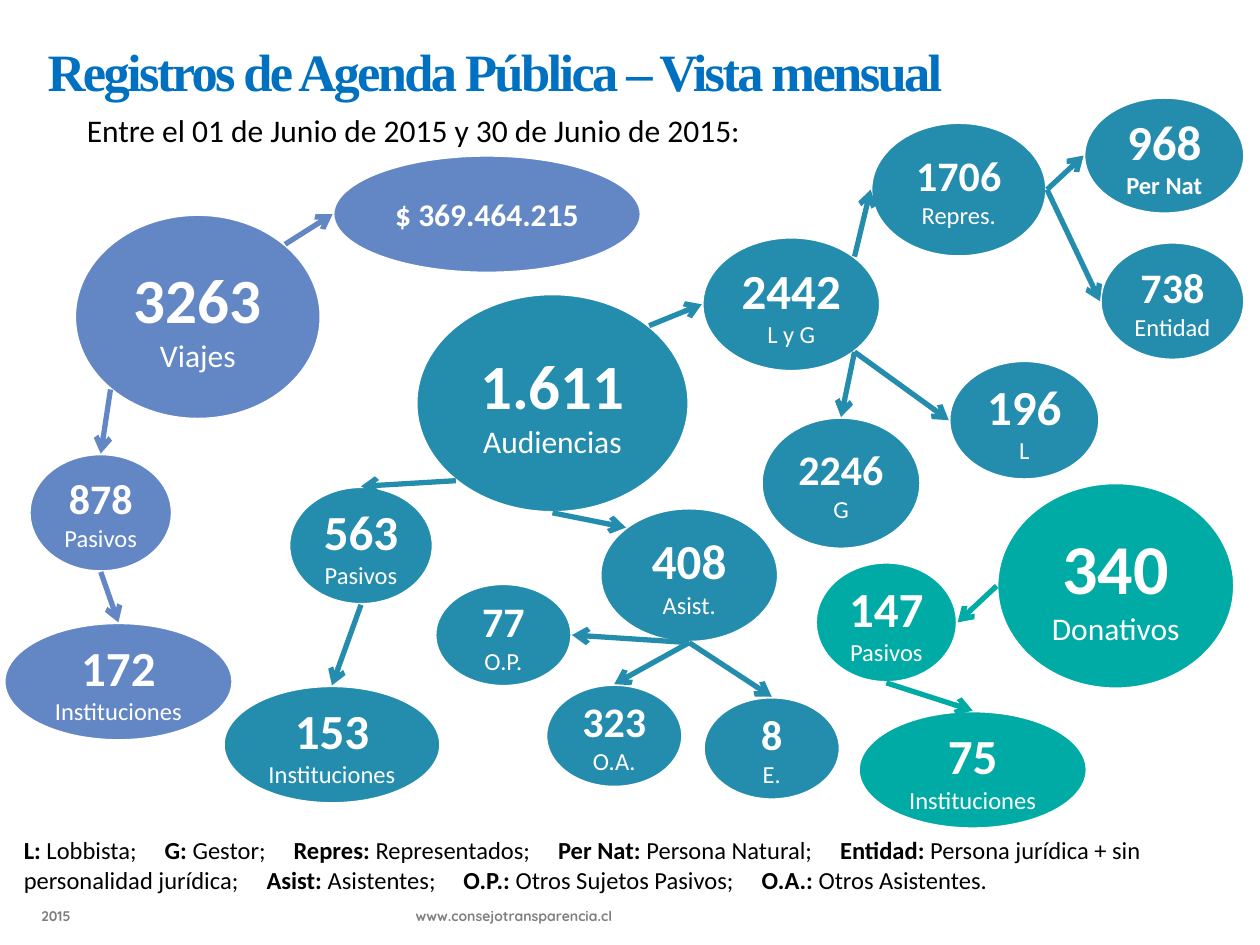
"""Build the monthly overview slide of public agenda records."""
from math import cos, radians, sin

from lxml.etree import SubElement
from pptx import Presentation
from pptx.dml.color import RGBColor
from pptx.enum.shapes import MSO_CONNECTOR, MSO_SHAPE
from pptx.enum.text import MSO_ANCHOR, PP_ALIGN
from pptx.oxml.ns import qn
from pptx.util import Inches, Pt

THEME = {
    "travel": "6387C5", "hearing": "248CAD", "gift": "00AAA5",
    "white": "FFFFFF", "black": "000000", "title": "0070C0", "footer": "808080",
    "body_font": "Calibri", "title_font": "Times New Roman", "footer_font": "Quicksand",
    "title_size": 30, "subtitle_size": 18, "legend_size": 14, "footer_size": 8,
    "huge": 40, "large": 36, "medium": 28, "small": 24, "caption": 18, "label": 14,
    "outline": 2, "arrow": 3, "title_spacing": -1.5, "legend_gap": 12.7,
}

TITLE = "Registros de Agenda Pública – Vista mensual"
SUBTITLE = "Entre el 01 de Junio de 2015 y 30 de Junio de 2015:"
FOOTER = "2015\twww.consejotransparencia.cl"
FOOTER_TAB = 2.97
LEGEND = [
    ("L:", "Lobbista;"), ("G:", "Gestor;"), ("Repres:", "Representados;"),
    ("Per Nat:", "Persona Natural;"),
    ("Entidad:", "Persona jurídica + sin personalidad jurídica;"),
    ("Asist:", "Asistentes;"), ("O.P.:", "Otros Sujetos Pasivos;"),
    ("O.A.:", "Otros Asistentes."),
]

BUBBLES = {
    "hearings": ("hearing", (3.3, 2.33, 2.17, 1.74), "1.611", "large", "Audiencias", "caption"),
    "gifts": ("gift", (7.91, 3.83, 1.89, 1.64), "340", "huge", "Donativos", "caption"),
    "trips": ("travel", (0.59, 1.7, 1.96, 1.63), "3263", "large", "Viajes", "caption"),
    "cost": ("travel", (2.64, 1.23, 2.45, 0.94), "$ 369.464.215", "caption", "", ""),
    "trip officials": ("travel", (0.23, 3.6, 1.14, 0.94), "878", "small", "Pasivos", "label"),
    "lobby": ("hearing", (5.57, 1.88, 1.42, 1.07), "2442", "medium", "L y G", "label"),
    "trip bodies": ("travel", (0.03, 4.94, 1.82, 0.94), "172", "medium", "Instituciones", "label"),
    "officials": ("hearing", (2.29, 3.86, 1.15, 0.94), "563", "medium", "Pasivos", "label"),
    "bodies": ("hearing", (1.77, 5.44, 1.73, 0.94), "153", "medium", "Instituciones", "label"),
    "represented": ("hearing", (6.91, 0.97, 1.4, 1.07), "1706", "small", "Repres.", "label"),
    "lobbyists": ("hearing", (7.53, 2.86, 1.2, 0.95), "196", "medium", "L", "label"),
    "managers": ("hearing", (6.04, 3.31, 1.27, 1.05), "2246", "small", "G", "label"),
    "gift officials": ("gift", (6.47, 4.46, 1.13, 0.96), "147", "medium", "Pasivos", "label"),
    "gift bodies": ("gift", (6.81, 5.64, 1.82, 0.94), "75", "medium", "Instituciones", "label"),
    "persons": ("hearing", (8.6, 0.77, 1.28, 0.93), "968", "medium", "Per Nat", "label"),
    "entities": ("hearing", (8.73, 1.92, 1.15, 0.94), "738", "small", "Entidad", "label"),
    "attendees": ("hearing", (4.76, 4.03, 1.42, 1.07), "408", "medium", "Asist.", "label"),
    "other officials": ("hearing", (3.45, 4.63, 1.09, 0.82), "77", "small", "O.P.", "label"),
    "other attendees": ("hearing", (4.33, 5.43, 1.09, 0.82), "323", "small", "O.A.", "label"),
    "e": ("hearing", (5.58, 5.53, 1.09, 0.82), "8", "small", "E.", "label"),
}
BOLD_LABELS = {"persons"}

ARROWS = [
    ("trips", "top right", "cost", "left"),
    ("trips", "bottom left", "trip officials", "top"),
    ("trip officials", "bottom", "trip bodies", "top"),
    ("hearings", "top right", "lobby", "left"),
    ("hearings", "bottom left", "officials", "top"),
    ("hearings", "bottom", "attendees", "top left"),
    ("officials", "bottom", "bodies", "top"),
    ("lobby", "top right", "represented", "left"),
    ("lobby", "bottom right", "managers", "top"),
    ("lobby", "bottom right", "lobbyists", "left"),
    ("represented", "right", "persons", "left"),
    ("represented", "right", "entities", "left"),
    ("attendees", "bottom", "other officials", "right"),
    ("attendees", "bottom", "other attendees", "top"),
    ("attendees", "bottom", "e", "top"),
    ("gifts", "left", "gift officials", "right"),
    ("gift officials", "bottom", "gift bodies", "top"),
]
SIDES = ["right", "bottom right", "bottom", "bottom left",
         "left", "top left", "top", "top right"]


def color(name):
    return RGBColor.from_string(THEME[name])


def add_span(para, text, size, ink, bold=False, font="body_font", spacing=0):
    span = para.add_run()
    span.text = text
    span.font.size = Pt(THEME[size])
    span.font.name = THEME[font]
    span.font.bold = bold
    span.font.color.rgb = color(ink)
    if spacing:
        span.font._element.set("spc", str(round(spacing * 100)))


def add_text_box(page, place):
    box = page.shapes.add_textbox(*map(Inches, place))
    box.text_frame.word_wrap = True
    return box.text_frame.paragraphs[0]


def add_bubble(page, name):
    fill, place, value, value_size, label, label_size = BUBBLES[name]
    bubble = page.shapes.add_shape(MSO_SHAPE.OVAL, *map(Inches, place))
    bubble.shadow.inherit = False
    bubble.fill.solid()
    bubble.fill.fore_color.rgb = color(fill)
    bubble.line.color.rgb = color("white")
    bubble.line.width = Pt(THEME["outline"])
    frame = bubble.text_frame
    frame.word_wrap = True
    frame.vertical_anchor = MSO_ANCHOR.MIDDLE
    para = frame.paragraphs[0]
    para.alignment = PP_ALIGN.CENTER
    add_span(para, value, value_size, "white", bold=True)
    if label:
        para = frame.add_paragraph()
        para.alignment = PP_ALIGN.CENTER
        add_span(para, label, label_size, "white", bold=name in BOLD_LABELS)


def edge_point(name, side):
    left, top, width, height = BUBBLES[name][1]
    angle = radians(45 * SIDES.index(side))
    return (Inches(left + width / 2 * (1 + cos(angle))),
            Inches(top + height / 2 * (1 + sin(angle))))


def add_arrow(page, source, source_side, target, target_side):
    arrow = page.shapes.add_connector(
        MSO_CONNECTOR.STRAIGHT,
        *edge_point(source, source_side), *edge_point(target, target_side))
    arrow.line.color.rgb = color(BUBBLES[source][0])
    arrow.line.width = Pt(THEME["arrow"])
    SubElement(arrow.line._get_or_add_ln(), qn("a:tailEnd"), type="arrow")
    SubElement(arrow._element.spPr, qn("a:effectLst"))


def add_legend(page):
    para = add_text_box(page, (0.09, 6.58, 9.79, 0.57))
    for index, (term, meaning) in enumerate(LEGEND):
        if index:
            add_span(para, " ", "legend_size", "black", spacing=THEME["legend_gap"])
        add_span(para, term + " ", "legend_size", "black", bold=True)
        add_span(para, meaning, "legend_size", "black")


def add_footer(page):
    para = add_text_box(page, (0.23, 7.15, 9.77, 0.3))
    tabs = SubElement(para._p.get_or_add_pPr(), qn("a:tabLst"))
    SubElement(tabs, qn("a:tab"), pos=str(Inches(FOOTER_TAB)), algn="l")
    add_span(para, FOOTER, "footer_size", "footer", bold=True, font="footer_font")


def main():
    deck = Presentation()
    deck.slide_width, deck.slide_height = Inches(10), Inches(7.5)
    page = deck.slides.add_slide(deck.slide_layouts[6])
    add_footer(page)
    subtitle = add_text_box(page, (0.59, 0.83, 8.11, 0.4))
    subtitle.alignment = PP_ALIGN.JUSTIFY
    add_span(subtitle, SUBTITLE, "subtitle_size", "black")
    for name in BUBBLES:
        add_bubble(page, name)
    for arrow in ARROWS:
        add_arrow(page, *arrow)
    title = add_text_box(page, (0.28, 0.26, 9.21, 0.61))
    add_span(title, TITLE, "title_size", "title", bold=True,
             font="title_font", spacing=THEME["title_spacing"])
    add_legend(page)
    deck.save("out.pptx")


if __name__ == "__main__":
    main()
